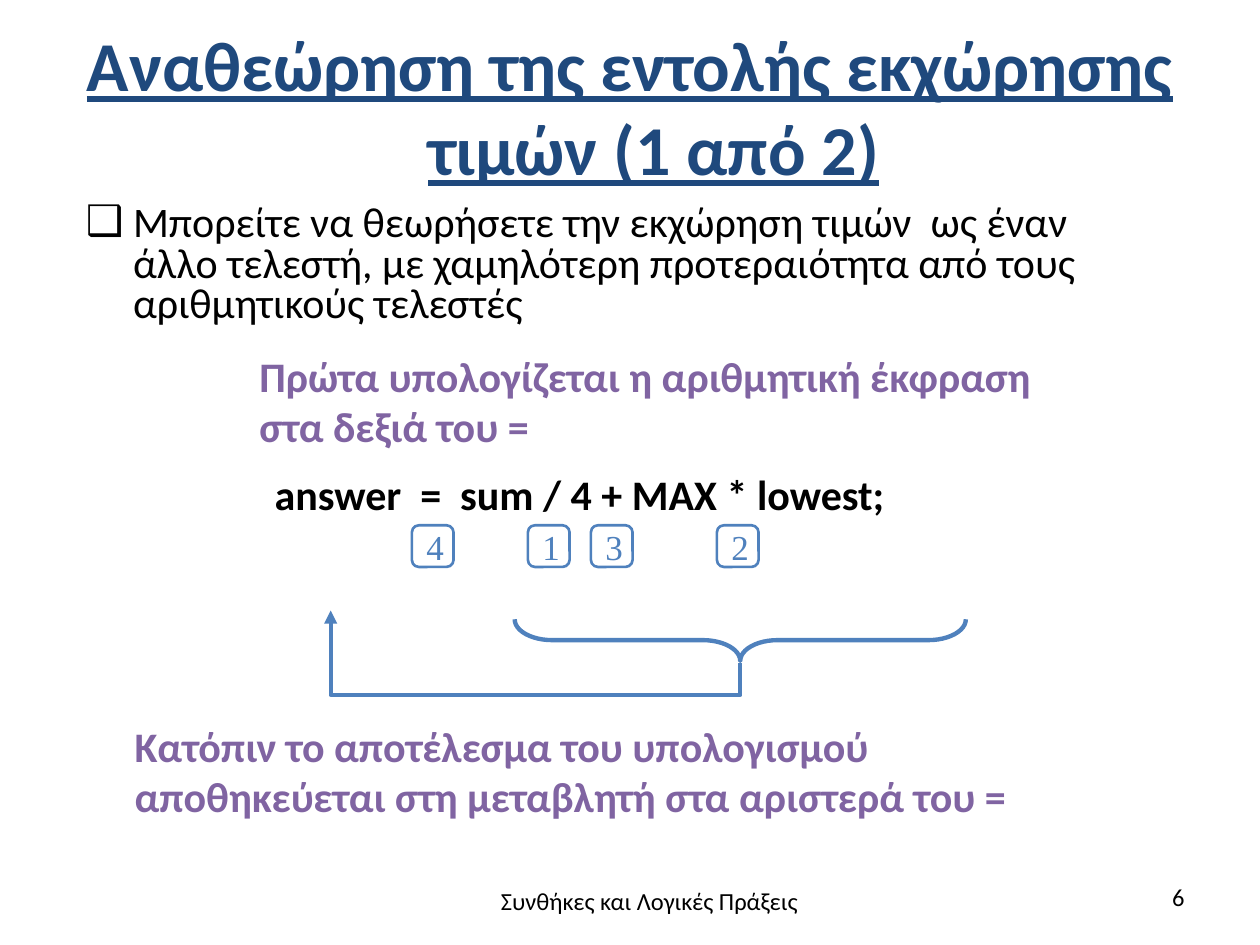
"""Build the slide on the assignment statement and its operator order."""
from dataclasses import dataclass

from lxml.etree import SubElement
from pptx import Presentation
from pptx.dml.color import RGBColor
from pptx.enum.shapes import MSO_CONNECTOR, MSO_SHAPE
from pptx.enum.text import MSO_ANCHOR, MSO_AUTO_SIZE, PP_ALIGN
from pptx.oxml.ns import qn
from pptx.util import Pt

BLACK, NAVY, PURPLE, BLUE = "000000", "1F497D", "8064A2", "4F81BD"
HANGING_INDENT = 27
CHIP_TOP, CHIP_SIZE = 300.2, 23.8


@dataclass
class Area:
    """Position and size in points."""
    left: float
    top: float
    width: float
    height: float

    def lengths(self) -> tuple:
        """Return the four lengths for python-pptx."""
        return Pt(self.left), Pt(self.top), Pt(self.width), Pt(self.height)


@dataclass
class Label:
    """A text box with one paragraph per line."""
    area: Area
    lines: tuple
    size: float = 24
    color: str = PURPLE
    bold: bool = True
    align: PP_ALIGN = PP_ALIGN.LEFT
    wrap: bool = False


@dataclass
class Chip:
    """A numbered marker under an operator."""
    left: float
    number: str


LABELS = [
    Label(Area(141.1, 196.6, 464.4, 65.5),
          ("Πρώτα υπολογίζεται η αριθμητική έκφραση", "στα δεξιά του =")),
    Label(Area(149.8, 264.2, 366.5, 36),
          ("answer  =  sum / 4 + MAX * lowest;",), color=BLACK),
    Label(Area(69.8, 408.2, 522, 65.5),
          ("Κατόπιν το αποτέλεσμα του υπολογισμού",
           "αποθηκεύεται στη μεταβλητή στα αριστερά του =")),
    Label(Area(245.5, 502.6, 251.3, 39.6), ("Συνθήκες και Λογικές Πράξεις",),
          14, BLACK, False, PP_ALIGN.CENTER, True),
    Label(Area(516.2, 500.4, 167.8, 28.8), ("6",),
          14, BLACK, False, PP_ALIGN.RIGHT, True),
]
CHIPS = [Chip(235.4, "4"), Chip(301.7, "1"), Chip(337.7, "3"), Chip(409.7, "2")]


def rgb(value: str) -> RGBColor:
    """Turn a hex string into a colour."""
    return RGBColor.from_string(value)


def write(para, text: str, *, size=24, color=BLACK, bold=False, underline=False,
          font="Calibri", align=PP_ALIGN.LEFT) -> None:
    """Write one formatted run into a paragraph."""
    para.alignment = align
    span = para.add_run()
    span.text = text
    span.font.name, span.font.size = font, Pt(size)
    span.font.bold, span.font.underline = bold, underline
    span.font.color.rgb = rgb(color)


def place(shape, area: Area) -> None:
    """Move and size a shape."""
    shape.left, shape.top, shape.width, shape.height = area.lengths()


def prepare_placeholder(shape, area: Area, bullet: str = ""):
    """Place a placeholder and return its hanging first paragraph."""
    place(shape, area)
    shape.text_frame.auto_size = MSO_AUTO_SIZE.NONE
    para = shape.text_frame.paragraphs[0]
    properties = para._p.get_or_add_pPr()
    properties.set("marL", str(Pt(HANGING_INDENT)))
    properties.set("indent", str(-Pt(HANGING_INDENT)))
    if bullet:
        SubElement(properties, qn("a:buChar")).set("char", bullet)
    para.space_before = Pt(0)
    return para


def add_label(slide, label: Label) -> None:
    """Draw a text box."""
    frame = slide.shapes.add_textbox(*label.area.lengths()).text_frame
    frame.word_wrap = label.wrap
    for index, line in enumerate(label.lines):
        para = frame.add_paragraph() if index else frame.paragraphs[0]
        write(para, line, size=label.size, color=label.color,
              bold=label.bold, align=label.align)


def add_outline(slide, kind: MSO_SHAPE, area: Area, line_width: float):
    """Draw an unfilled preset shape."""
    shape = slide.shapes.add_shape(kind, *area.lengths())
    shape.shadow.inherit = False
    shape.fill.background()
    shape.line.color.rgb = rgb(BLUE)
    shape.line.width = Pt(line_width)
    return shape


def add_chip(slide, chip: Chip) -> None:
    """Draw a numbered marker."""
    area = Area(chip.left, CHIP_TOP, CHIP_SIZE, CHIP_SIZE)
    frame = add_outline(slide, MSO_SHAPE.ROUNDED_RECTANGLE, area, 1.5).text_frame
    frame.word_wrap = False
    frame.vertical_anchor = MSO_ANCHOR.MIDDLE
    write(frame.paragraphs[0], chip.number, size=20, color=BLUE, font="Times New Roman")


def add_result_arrow(slide) -> None:
    """Draw the elbow arrow from the brace to the variable."""
    arrow = slide.shapes.add_connector(MSO_CONNECTOR.ELBOW, 0, 0, 0, 0)
    place(arrow, Area(290.9, 247, 30.2, 234))
    arrow.line.color.rgb = rgb(BLUE)
    arrow.line.width = Pt(2.5)
    properties = arrow._element.spPr
    frame = properties.find(qn("a:xfrm"))
    frame.set("rot", str(270 * 60000))
    frame.set("flipV", "1")
    guides = properties.find(qn("a:prstGeom")).get_or_add_avLst()
    guide = SubElement(guides, qn("a:gd"))
    guide.set("name", "adj1")
    guide.set("fmla", "val -60000")
    SubElement(properties.find(qn("a:ln")), qn("a:tailEnd")).set("type", "triangle")
    SubElement(properties, qn("a:effectLst"))


def main() -> None:
    """Assemble and save the deck."""
    deck = Presentation()
    deck.slide_width, deck.slide_height = Pt(720), Pt(540)
    slide = deck.slides.add_slide(deck.slide_layouts[1])
    title, body = slide.placeholders
    write(prepare_placeholder(title, Area(36, 9.4, 648, 102.2)),
          "Αναθεώρηση της εντολής εκχώρησης τιμών (1 από 2)",
          size=40, color=NAVY, bold=True, underline=True, align=PP_ALIGN.CENTER)
    title.text_frame.vertical_anchor = MSO_ANCHOR.MIDDLE
    para = prepare_placeholder(body, Area(41.8, 113.8, 612, 82), "❑")
    para.line_spacing = 0.8
    write(para, "Μπορείτε να θεωρήσετε την εκχώρηση τιμών  ως έναν άλλο τελεστή, "
                "με χαμηλότερη προτεραιότητα από τους αριθμητικούς τελεστές")
    for label in LABELS:
        add_label(slide, label)
    for chip in CHIPS:
        add_chip(slide, chip)
    brace = add_outline(slide, MSO_SHAPE.LEFT_BRACE, Area(411.1, 236.9, 23.8, 257.8), 2.5)
    brace.rotation = 270
    brace.adjustments[0] = 0.9
    add_result_arrow(slide)
    deck.save("out.pptx")


if __name__ == "__main__":
    main()
